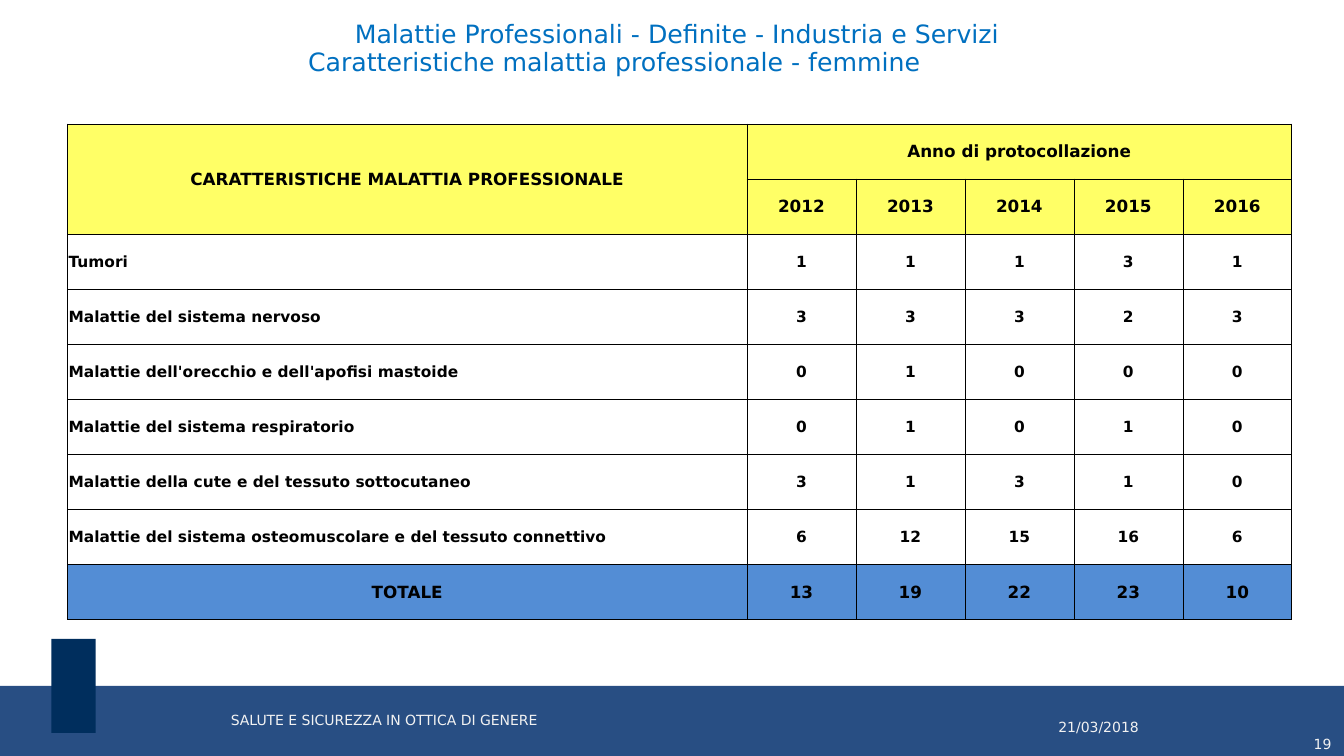
from lxml.etree import SubElement
from pptx import Presentation
from pptx.dml.color import RGBColor
from pptx.enum.shapes import MSO_SHAPE
from pptx.enum.text import MSO_ANCHOR, PP_ALIGN
from pptx.oxml.ns import qn
from pptx.util import Pt

FONT = "DejaVu Sans"
BAND = RGBColor(0x28, 0x4E, 0x83)
NAVY = RGBColor(0x00, 0x2E, 0x5D)
TITLE = RGBColor(0x00, 0x70, 0xC0)
PALE = RGBColor(0xF2, 0xF2, 0xF2)
BLACK = RGBColor(0x00, 0x00, 0x00)
YELLOW = RGBColor(0xFF, 0xFF, 0x66)
BLUE = RGBColor(0x53, 0x8D, 0xD5)

YEARS = ["2012", "2013", "2014", "2015", "2016"]
CASES = [
    ("Tumori", 1, 1, 1, 3, 1),
    ("Malattie del sistema nervoso", 3, 3, 3, 2, 3),
    ("Malattie dell'orecchio e dell'apofisi mastoide", 0, 1, 0, 0, 0),
    ("Malattie del sistema respiratorio", 0, 1, 0, 1, 0),
    ("Malattie della cute e del tessuto sottocutaneo", 3, 1, 3, 1, 0),
    ("Malattie del sistema osteomuscolare e del tessuto connettivo",
     6, 12, 15, 16, 6),
]
TOTALS = ("TOTALE", 13, 19, 22, 23, 10)


def write(para, text, size=10, color=PALE, bold=False,
          align=PP_ALIGN.LEFT, spacing=None, indent=0):
    if indent:
        para._p.get_or_add_pPr().set("marL", str(Pt(indent)))
    para.alignment = align
    if spacing:
        para.line_spacing = spacing
    run = para.add_run()
    run.text = text
    run.font.name = FONT
    run.font.size = Pt(size)
    run.font.bold = bold
    run.font.color.rgb = color


def add_bar(slide, left, top, width, height, color):
    bar = slide.shapes.add_shape(
        MSO_SHAPE.RECTANGLE, Pt(left), Pt(top), Pt(width), Pt(height))
    bar.shadow.inherit = False
    bar.fill.solid()
    bar.fill.fore_color.rgb = color
    bar.line.fill.background()


def add_frame(slide, left, top, width, height):
    """Add a wrapping text box without margins and return its text frame."""
    box = slide.shapes.add_textbox(Pt(left), Pt(top), Pt(width), Pt(height))
    frame = box.text_frame
    frame.word_wrap = True
    frame.margin_left = frame.margin_right = 0
    frame.margin_top = frame.margin_bottom = 0
    return frame


def add_title(slide):
    frame = add_frame(slide, 62.64, 15.84, 842, 72.72)
    write(frame.paragraphs[0],
          "Malattie Professionali - Definite - Industria e Servizi",
          size=18, color=TITLE, align=PP_ALIGN.CENTER, spacing=0.9)
    write(frame.add_paragraph(),
          "Caratteristiche malattia professionale - femmine",
          size=18, color=TITLE, spacing=0.9, indent=157.4)


def add_footer(slide):
    frame = add_frame(slide, 164.88, 509.76, 501, 18)
    write(frame.paragraphs[0], "SALUTE E SICUREZZA IN OTTICA DI GENERE",
          spacing=0.9)
    frame = add_frame(slide, 756, 488.16, 204, 51.84)
    frame.vertical_anchor = MSO_ANCHOR.BOTTOM
    frame.margin_right = Pt(9)
    frame.margin_bottom = Pt(2.6)
    write(frame.paragraphs[0], "21/03/2018")
    write(frame.add_paragraph(), "19", align=PP_ALIGN.RIGHT)


def style_cell(cell, fill):
    cell.vertical_anchor = MSO_ANCHOR.MIDDLE
    cell.margin_left = cell.margin_right = cell.margin_top = Pt(0.72)
    cell.margin_bottom = 0
    props = cell._tc.get_or_add_tcPr()
    for side in ("lnL", "lnR", "lnT", "lnB"):
        line = SubElement(props, qn(f"a:{side}"), w=str(Pt(0.5)))
        paint = SubElement(line, qn("a:solidFill"))
        SubElement(paint, qn("a:srgbClr"), val=str(BLACK))
    if fill is None:
        cell.fill.background()
    else:
        cell.fill.solid()
        cell.fill.fore_color.rgb = fill


def add_cases(slide):
    heads = [
        ["CARATTERISTICHE MALATTIA PROFESSIONALE",
         "Anno di protocollazione", "", "", "", ""],
        ["", *YEARS],
    ]
    rows = [*heads, *CASES, TOTALS]
    last = len(rows) - 1
    table = slide.shapes.add_table(
        len(rows), 6, Pt(48.24), Pt(88.56), Pt(874.6), Pt(354.24)).table
    table.first_row = table.horz_banding = False
    for col, width in enumerate([485.3] + [77.86] * 5):
        table.columns[col].width = Pt(width)
    for i, row in enumerate(rows):
        table.rows[i].height = Pt(39.36)
        body = len(heads) <= i < last
        fill = None if body else BLUE if i == last else YELLOW
        for j, value in enumerate(row):
            cell = table.cell(i, j)
            style_cell(cell, fill)
            if value != "":
                left = body and j == 0
                write(cell.text_frame.paragraphs[0], str(value),
                      size=11 if body else 12, color=BLACK, bold=True,
                      align=PP_ALIGN.LEFT if left else PP_ALIGN.CENTER)
    table.cell(0, 0).merge(table.cell(1, 0))
    table.cell(0, 1).merge(table.cell(0, 5))


def main():
    deck = Presentation()
    deck.slide_width, deck.slide_height = Pt(960), Pt(540)
    slide = deck.slides.add_slide(deck.slide_layouts[6])
    add_bar(slide, 0, 490, 960, 50, BAND)
    add_bar(slide, 36.72, 456.3, 31.68, 67.3, NAVY)
    add_title(slide)
    add_cases(slide)
    add_footer(slide)
    deck.save("out.pptx")


if __name__ == "__main__":
    main()
